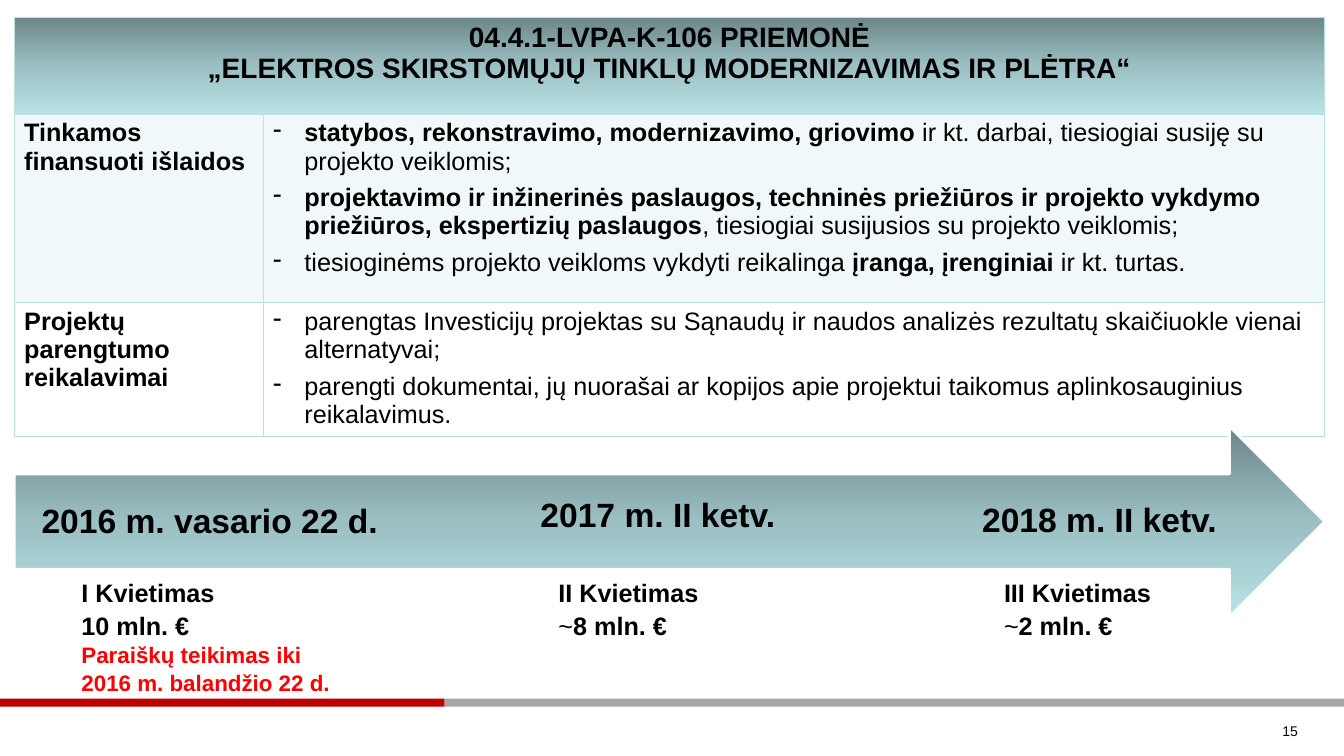
from dataclasses import dataclass

import pptx
import pptx.chart.data
import pptx.dml.color
import pptx.enum.shapes
import pptx.enum.text
import pptx.oxml
import pptx.oxml.ns
import pptx.util

Inches = pptx.util.Inches
Pt = pptx.util.Pt
qn = pptx.oxml.ns.qn
SHAPES = pptx.enum.shapes.MSO_SHAPE
ALIGN = pptx.enum.text.PP_ALIGN
ANCHOR = pptx.enum.text.MSO_ANCHOR
NAMESPACE = pptx.oxml.ns.nsdecls("a")


@dataclass(frozen=True)
class Theme:
    font: str = "Arial"
    text: str = "000000"
    alert: str = "FF0000"
    red: str = "C00000"
    grey: str = "A6A6A6"
    white: str = "FFFFFF"
    border: str = "BBE0E3"
    gradient: tuple = ((0, "6D8688"), (50, "9BBFC2"), (100, "B8E3E6"))
    date: int = 24
    title: int = 20
    body: int = 18
    deadline: int = 16
    number: int = 10


THEME = Theme()

TITLE = [
    [("04.4.1-LVPA-K-106 PRIEMONĖ", True)],
    [("„ELEKTROS SKIRSTOMŲJŲ TINKLŲ MODERNIZAVIMAS IR PLĖTRA“", True)],
]
REQUIREMENTS = [
    ("Tinkamos finansuoti išlaidos", [
        [("statybos, rekonstravimo, modernizavimo, griovimo ", True),
         ("ir kt. darbai, tiesiogiai susiję su projekto veiklomis;", False)],
        [("projektavimo ir inžinerinės paslaugos, techninės priežiūros ir projekto "
          "vykdymo priežiūros, ekspertizių paslaugos", True),
         (", tiesiogiai susijusios su projekto veiklomis;", False)],
        [("tiesioginėms projekto veikloms vykdyti reikalinga ", False),
         ("įranga, įrenginiai ", True),
         ("ir kt. turtas.", False)],
    ]),
    ("Projektų parengtumo reikalavimai", [
        [("parengtas Investicijų projektas su Sąnaudų ir naudos analizės rezultatų "
          "skaičiuokle vienai alternatyvai;", False)],
        [("parengti dokumentai, jų nuorašai ar kopijos apie projektui taikomus "
          "aplinkosauginius reikalavimus.", False)],
    ]),
]
DATES = [
    ("2016 m. vasario 22 d.", 0.4, 4.71, 3.36),
    ("2017 m. II ketv.", 4.91, 4.66, 3.23),
    ("2018 m. II ketv.", 9.23, 4.7, 3.35),
]
CALLS = [
    (0.71, 2.47, "I Kvietimas", [("10 mln. €", True)]),
    (5.44, 2.4, "II Kvietimas", [("~", False), ("8 mln. €", True)]),
    (9.86, 2.43, "III Kvietimas", [("~", False), ("2 mln. €", True)]),
]
DEADLINE = [[("Paraiškų teikimas iki", True)], [("2016 m. balandžio 22 d.", True)]]


def rgb(color):
    return pptx.dml.color.RGBColor.from_string(color)


def add_bullet(para):
    properties = para._p.get_or_add_pPr()
    properties.set("marL", str(Inches(0.31)))
    properties.set("indent", str(-Inches(0.31)))
    properties.append(pptx.oxml.parse_xml(f'<a:buChar {NAMESPACE} char="-"/>'))
    para.space_after = Pt(6)


def write(frame, paragraphs, size, color=THEME.text, align=ALIGN.LEFT,
          spacing=None, bullets=False):
    frame.word_wrap = True
    for index, spans in enumerate(paragraphs):
        para = frame.paragraphs[0] if index == 0 else frame.add_paragraph()
        if bullets:
            add_bullet(para)
        para.alignment = align
        if spacing:
            para.line_spacing = spacing
        for text, bold in spans:
            span = para.add_run()
            span.text = text
            span.font.name = THEME.font
            span.font.size = Pt(size)
            span.font.bold = bold
            span.font.color.rgb = rgb(color)


def add_text(page, left, top, width, height, paragraphs, size, anchor=ANCHOR.TOP,
             margins=None, **style):
    box = page.shapes.add_textbox(Inches(left), Inches(top), Inches(width), Inches(height))
    frame = box.text_frame
    frame.vertical_anchor = anchor
    if margins:
        side, edge = margins
        frame.margin_left = frame.margin_right = Inches(side)
        frame.margin_top = frame.margin_bottom = Inches(edge)
    write(frame, paragraphs, size, **style)


def add_shape(page, kind, left, top, width, height):
    shape = page.shapes.add_shape(kind, Inches(left), Inches(top), Inches(width), Inches(height))
    shape.shadow.inherit = False
    return shape


def add_bar(page, left, width, color):
    bar = add_shape(page, SHAPES.RECTANGLE, left, 6.93, width, 0.08)
    bar.fill.solid()
    bar.fill.fore_color.rgb = rgb(color)
    bar.line.fill.background()


def fill_gradient(fill, properties):
    fill.gradient()
    fill.gradient_angle = 270
    stops = properties.find(qn("a:gradFill")).find(qn("a:gsLst"))
    for stop in list(stops):
        stops.remove(stop)
    for position, color in THEME.gradient:
        stops.append(pptx.oxml.parse_xml(
            f'<a:gs {NAMESPACE} pos="{position * 1000}"><a:srgbClr val="{color}"/></a:gs>'))


def fill_tint(cell):
    cell.fill.solid()
    cell.fill.fore_color.rgb = rgb(THEME.border)
    color = cell._tc.tcPr.find(qn("a:solidFill")).find(qn("a:srgbClr"))
    color.append(pptx.oxml.parse_xml(f'<a:alpha {NAMESPACE} val="20000"/>'))


def add_borders(cell, bottom=1):
    properties = cell._tc.get_or_add_tcPr()
    for side, width in (("L", 1), ("R", 1), ("T", 1), ("B", bottom)):
        properties.append(pptx.oxml.parse_xml(
            f'<a:ln{side} {NAMESPACE} w="{Pt(width)}"><a:solidFill>'
            f'<a:srgbClr val="{THEME.border}"/></a:solidFill></a:ln{side}>'))


def add_requirements(page):
    table = page.shapes.add_table(
        3, 2, Inches(0.14), Inches(0.17), Inches(13), Inches(4.16)).table
    table.first_row = table.horz_banding = False
    for column, width in zip(table.columns, (2.47, 10.53)):
        column.width = Inches(width)
    for row, height in zip(table.rows, (0.96, 1.87, 1.33)):
        row.height = Inches(height)

    header = table.cell(0, 0)
    header.merge(table.cell(0, 1))
    for column in range(2):
        add_borders(table.cell(0, column), bottom=2)
    fill_gradient(header.fill, header._tc.tcPr)
    write(header.text_frame, TITLE, THEME.title, align=ALIGN.CENTER)

    for row, (label, items) in enumerate(REQUIREMENTS, 1):
        cells = table.cell(row, 0), table.cell(row, 1)
        for cell in cells:
            add_borders(cell)
            if row == 1:
                fill_tint(cell)
            else:
                cell.fill.background()
        write(cells[0].text_frame, [[(label, True)]], THEME.body)
        write(cells[1].text_frame, items, THEME.body, bullets=True)


def add_timeline(page):
    arrow = add_shape(page, SHAPES.RIGHT_ARROW, 0.14, 4.23, 13, 1.89)
    fill_gradient(arrow.fill, arrow._element.spPr)
    arrow.line.color.rgb = rgb(THEME.white)
    arrow.line.width = Pt(2)
    for date, left, top, width in DATES:
        add_text(page, left, top, width, 0.94, [[(date, True)]], THEME.date,
                 anchor=ANCHOR.MIDDLE, margins=(0, 0.27), align=ALIGN.CENTER, spacing=0.9)
    for left, width, name, amount in CALLS:
        add_text(page, left, 5.66, width, 0.71, [[(name, True)], amount], THEME.body,
                 spacing=1.07)
    add_text(page, 0.71, 6.29, 3.04, 0.64, DEADLINE, THEME.deadline,
             color=THEME.alert, spacing=1.07)


def main():
    deck = pptx.Presentation()
    deck.slide_width, deck.slide_height = Inches(13.33), Inches(7.5)
    page = deck.slides.add_slide(deck.slide_layouts[6])
    add_bar(page, 0, 4.41, THEME.red)
    add_bar(page, 4.41, 8.92, THEME.grey)
    add_requirements(page)
    add_timeline(page)
    add_text(page, 9.86, 7.01, 3.11, 0.49, [[("15", False)]], THEME.number,
             anchor=ANCHOR.MIDDLE, align=ALIGN.RIGHT)
    deck.save("out.pptx")


if __name__ == "__main__":
    main()
